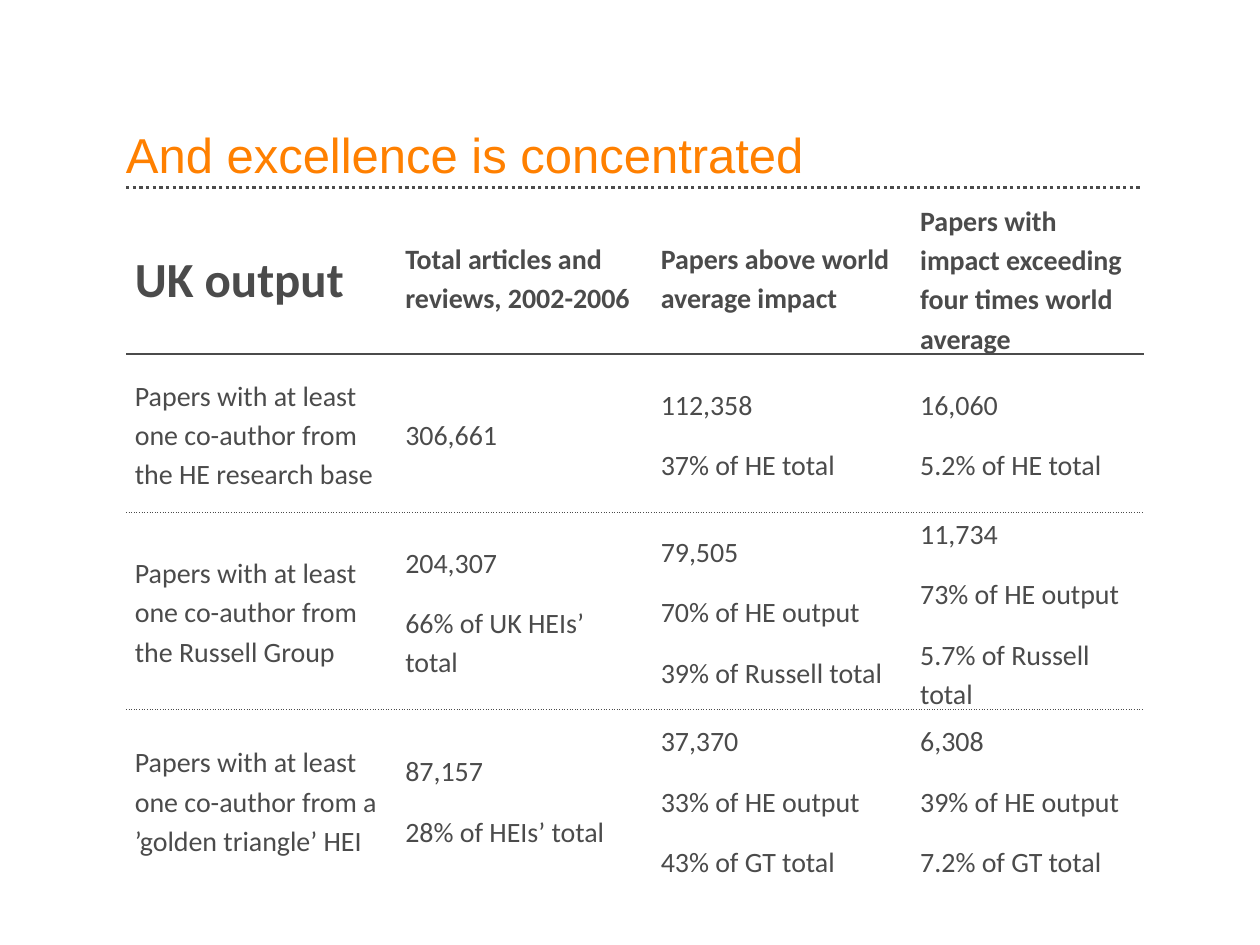
from lxml.etree import SubElement
from pptx import Presentation
from pptx.dml.color import RGBColor
from pptx.enum.dml import MSO_LINE
from pptx.enum.shapes import MSO_CONNECTOR
from pptx.enum.text import MSO_ANCHOR
from pptx.oxml.ns import qn
from pptx.util import Cm, Pt

TITLE = "And excellence is concentrated"
HEADER = [
    "UK output",
    "Total articles and reviews, 2002-2006",
    "Papers above world average impact",
    "Papers with impact exceeding four times world average",
]
# Each cell is a list of paragraphs.
ROWS = [
    [[text] for text in HEADER],
    [
        ["Papers with at least one co-author from the HE research base"],
        ["306,661"],
        ["112,358", "37% of HE total"],
        ["16,060", "5.2% of HE total"],
    ],
    [
        ["Papers with at least one co-author from the Russell Group"],
        ["204,307", "66% of UK HEIs’ total"],
        ["79,505", "70% of HE output", "39% of Russell total"],
        ["11,734", "73% of HE output", "5.7% of Russell total"],
    ],
    [
        ["Papers with at least one co-author from a ’golden triangle’ HEI"],
        ["87,157", "28% of HEIs’ total"],
        ["37,370", "33% of HE output", "43% of GT total"],
        ["6,308", "39% of HE output", "7.2% of GT total"],
    ],
]
COLUMN_WIDTHS = [5.45, 5.15, 5.23, 4.69]
ROW_HEIGHTS = [2.38, 3.2, 3.66, 3.66]
LEFT, RULE_TOP, RULE_WIDTH, TABLE_TOP = 2.54, 3.78, 20.47, 4.02
COLORS = {"text": "4B4B4B", "title": "FF8000"}

# Line below each row: width in points and dash.
HEADER_LINE, ROW_LINE = (1, "solid"), (0.5, "sysDot")
LINES_BELOW = [HEADER_LINE, ROW_LINE, ROW_LINE, None]

CELL_FORMAT = {
    "margin_left": Cm(0.18), "margin_right": Cm(0.18),
    "margin_top": 0, "margin_bottom": 0,
    "vertical_anchor": MSO_ANCHOR.MIDDLE,
}
TITLE_FORMAT = {
    "margin_left": 0, "margin_right": 0, "margin_top": 0, "margin_bottom": 0,
    "vertical_anchor": MSO_ANCHOR.BOTTOM, "word_wrap": True,
}


def set_attributes(target, values):
    for name, value in values.items():
        setattr(target, name, value)


def format_font(font, color, **values):
    set_attributes(font, values)
    font.color.rgb = RGBColor.from_string(COLORS[color])


def add_border(cell, side, line):
    properties = cell._tc.get_or_add_tcPr()
    border = SubElement(properties, qn(f"a:ln{side}"))
    if line is None:
        SubElement(border, qn("a:noFill"))
        return
    width, dash = line
    border.set("w", str(int(Pt(width))))
    fill = SubElement(border, qn("a:solidFill"))
    SubElement(fill, qn("a:srgbClr"), val=COLORS["text"])
    SubElement(border, qn("a:prstDash"), val=dash)


def fill_cell(cell, texts, size, bold):
    set_attributes(cell, CELL_FORMAT)
    frame = cell.text_frame
    for index, text in enumerate(texts):
        paragraph = frame.add_paragraph() if index else frame.paragraphs[0]
        paragraph.text = text
        set_attributes(paragraph, {
            "line_spacing": 1.15,
            "space_before": Pt(6 if index else 0),
            "space_after": Pt(6),
        })
        format_font(paragraph.runs[0].font, "text",
                    name="Calibri", size=Pt(size), bold=bold)


def add_title(slide):
    box = slide.shapes.add_textbox(Cm(LEFT), Cm(1.4), Cm(RULE_WIDTH), Cm(2.31))
    set_attributes(box.text_frame, TITLE_FORMAT)
    paragraph = box.text_frame.paragraphs[0]
    paragraph.text = TITLE
    paragraph.line_spacing = 0.9
    format_font(paragraph.runs[0].font, "title", name="Arial", size=Pt(28))


def add_rule(slide):
    rule = slide.shapes.add_connector(
        MSO_CONNECTOR.STRAIGHT, Cm(LEFT), Cm(RULE_TOP),
        Cm(LEFT + RULE_WIDTH), Cm(RULE_TOP))
    rule.line.color.rgb = RGBColor.from_string(COLORS["text"])
    rule.line.width = Pt(1.9)
    rule.line.dash_style = MSO_LINE.ROUND_DOT
    SubElement(rule._element.spPr, qn("a:effectLst"))


def add_output_table(slide):
    table = slide.shapes.add_table(
        len(ROWS), len(HEADER), Cm(LEFT), Cm(TABLE_TOP),
        Cm(sum(COLUMN_WIDTHS)), Cm(sum(ROW_HEIGHTS))).table
    set_attributes(table, {"first_row": False, "horz_banding": False})
    for column, width in zip(table.columns, COLUMN_WIDTHS):
        column.width = Cm(width)
    for row_index, row in enumerate(ROWS):
        table.rows[row_index].height = Cm(ROW_HEIGHTS[row_index])
        is_header = row_index == 0
        line_above = None if is_header else LINES_BELOW[row_index - 1]
        borders = {"L": None, "R": None,
                   "T": line_above, "B": LINES_BELOW[row_index]}
        for column_index, texts in enumerate(row):
            cell = table.cell(row_index, column_index)
            size = 28 if is_header and column_index == 0 else 16
            fill_cell(cell, texts, size, is_header)
            for side, line in borders.items():
                add_border(cell, side, line)
            cell.fill.background()


def main():
    presentation = Presentation()
    presentation.slide_width, presentation.slide_height = Cm(25.4), Cm(19.05)
    slide = presentation.slides.add_slide(presentation.slide_layouts[6])
    add_rule(slide)
    add_title(slide)
    add_output_table(slide)
    presentation.save("out.pptx")


if __name__ == "__main__":
    main()
